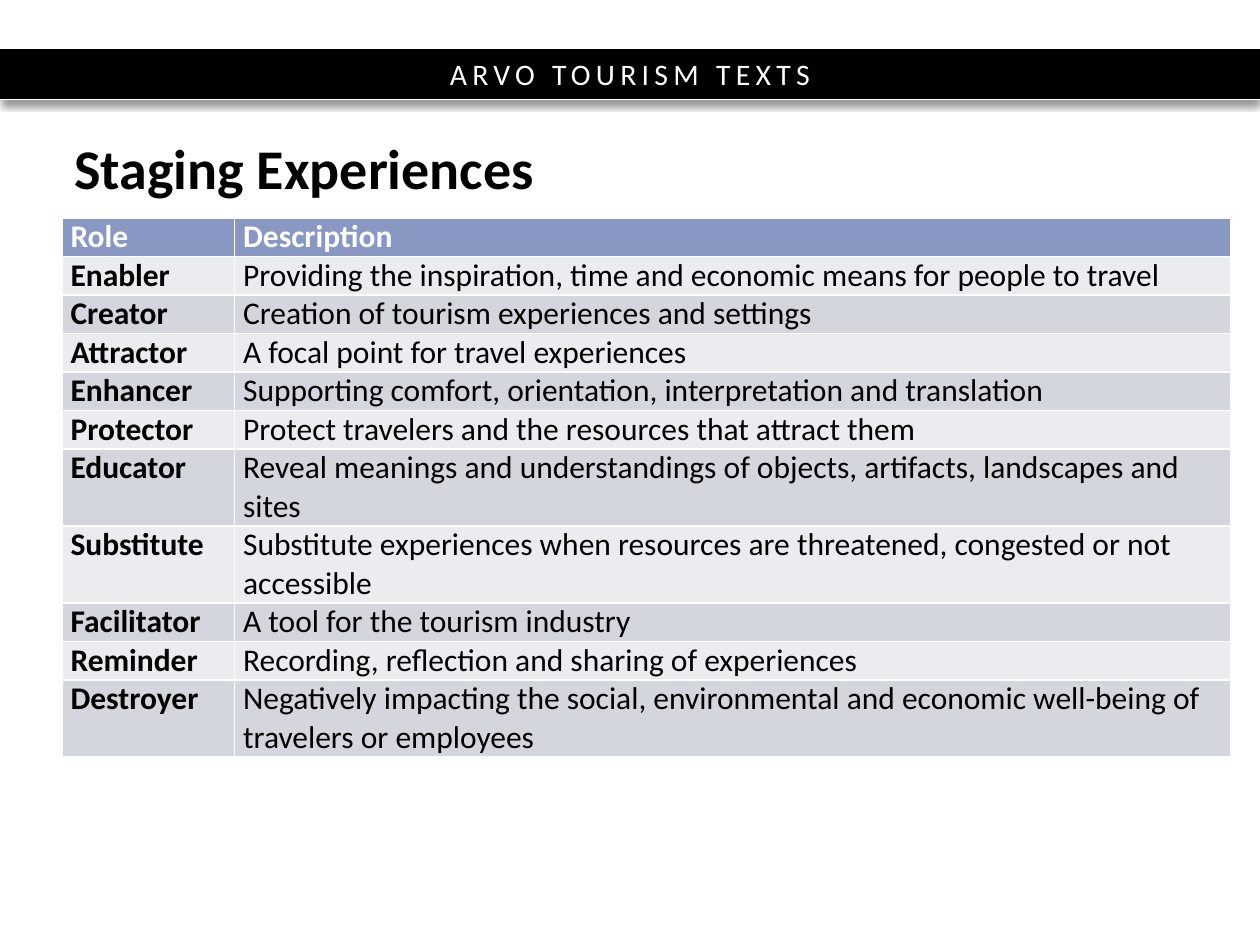
from dataclasses import dataclass

from lxml.etree import SubElement
from pptx import Presentation
from pptx.dml.color import RGBColor
from pptx.enum.shapes import MSO_CONNECTOR, MSO_SHAPE
from pptx.enum.text import MSO_ANCHOR, PP_ALIGN
from pptx.oxml import parse_xml
from pptx.oxml.ns import nsdecls, qn
from pptx.util import Inches, Pt


@dataclass(frozen=True)
class Theme:
    font: str = "Calibri"
    black: str = "000000"
    white: str = "FFFFFF"
    header: str = "8898C3"
    light_band: str = "EAECEF"
    dark_band: str = "D3D6DD"
    banner_size: float = 17
    title_size: float = 32
    table_size: float = 18


@dataclass(frozen=True)
class Role:
    name: str
    description: str
    lines: int = 1


THEME = Theme()
PAGE_WIDTH, PAGE_HEIGHT = 10, 7.5
BANNER_TOP, BANNER_HEIGHT = 0.38, 0.41
COLUMN_WIDTHS = (1.37, 7.91)
LINE_HEIGHT = 0.28

ROLES = [
    Role("Enabler", "Providing the inspiration, time and economic means for people to travel"),
    Role("Creator", "Creation of tourism experiences and settings"),
    Role("Attractor", "A focal point for travel experiences"),
    Role("Enhancer", "Supporting comfort, orientation, interpretation and translation"),
    Role("Protector", "Protect travelers and the resources that attract them"),
    Role("Educator", "Reveal meanings and understandings of objects, artifacts, "
         "landscapes and sites", lines=2),
    Role("Substitute", "Substitute experiences when resources are threatened, "
         "congested or not accessible", lines=2),
    Role("Facilitator", "A tool for the tourism industry"),
    Role("Reminder", "Recording, reflection and sharing of experiences"),
    Role("Destroyer", "Negatively impacting the social, environmental and economic "
         "well-being of travelers or employees", lines=2),
]


def write_text(frame, text: str, *, size: float, color: str = THEME.black,
               bold: bool = False, align=PP_ALIGN.LEFT, tracking: float = 0,
               line_spacing: float | None = None, space_after: float = 0) -> None:
    """Fill a text frame with one formatted paragraph; all measures are in points."""
    frame.word_wrap = True
    para = frame.paragraphs[0]
    para.alignment = align
    para.space_before = Pt(0)
    para.space_after = Pt(space_after)
    if line_spacing:
        para.line_spacing = Pt(line_spacing)
    span = para.add_run()
    span.text = text
    span.font.name = THEME.font
    span.font.size = Pt(size)
    span.font.bold = bold
    span.font.color.rgb = RGBColor.from_string(color)
    if tracking:
        span._r.get_or_add_rPr().set("spc", str(int(tracking * 100)))


def add_rule(page, top: float) -> None:
    rule = page.shapes.add_connector(MSO_CONNECTOR.STRAIGHT, 0, Inches(top),
                                     Inches(PAGE_WIDTH), Inches(top))
    rule.line.color.rgb = RGBColor.from_string(THEME.white)
    rule.line.width = Pt(0.75)
    SubElement(rule._element.spPr, qn("a:effectLst"))


def add_banner(page, text: str) -> None:
    banner = page.shapes.add_shape(MSO_SHAPE.RECTANGLE, 0, Inches(BANNER_TOP),
                                   Inches(PAGE_WIDTH), Inches(BANNER_HEIGHT))
    banner.fill.solid()
    banner.fill.fore_color.rgb = RGBColor.from_string(THEME.black)
    banner.line.fill.background()
    banner._element.spPr.append(parse_xml(
        f'<a:effectLst {nsdecls("a")}>'
        f'<a:outerShdw blurRad="{Pt(4)}" dist="{Pt(3)}" dir="5400000" rotWithShape="0">'
        f'<a:srgbClr val="{THEME.black}"><a:alpha val="40000"/></a:srgbClr>'
        '</a:outerShdw></a:effectLst>'))
    banner.text_frame.vertical_anchor = MSO_ANCHOR.MIDDLE
    write_text(banner.text_frame, text, size=THEME.banner_size, color=THEME.white,
               align=PP_ALIGN.CENTER, tracking=3)
    for top in (BANNER_TOP, BANNER_TOP + BANNER_HEIGHT):
        add_rule(page, top)


def set_title(page, text: str) -> None:
    title = page.shapes.title
    title.left, title.top = Inches(0.49), Inches(1.13)
    title.width, title.height = Inches(9.08), Inches(0.48)
    title.text_frame.vertical_anchor = MSO_ANCHOR.MIDDLE
    write_text(title.text_frame, text, size=THEME.title_size, bold=True, line_spacing=32)


def style_cell(cell, fill: str) -> None:
    """Set margins, white borders and fill; borders must precede the fill in the XML."""
    cell.margin_left = cell.margin_right = Inches(0.07)
    cell.margin_top = cell.margin_bottom = 0
    properties = cell._tc.get_or_add_tcPr()
    for side in ("lnL", "lnR", "lnT", "lnB"):
        border = SubElement(properties, qn(f"a:{side}"), w=str(Pt(1)))
        SubElement(SubElement(border, qn("a:solidFill")), qn("a:srgbClr"), val=THEME.white)
    cell.fill.solid()
    cell.fill.fore_color.rgb = RGBColor.from_string(fill)


def add_role_table(page, roles: list[Role]) -> None:
    rows = [Role("Role", "Description"), *roles]
    total_lines = sum(role.lines for role in rows)
    table = page.shapes.add_table(
        len(rows), len(COLUMN_WIDTHS), Inches(0.49), Inches(1.73),
        Inches(sum(COLUMN_WIDTHS)), Inches(total_lines * LINE_HEIGHT)).table
    for column, width in zip(table.columns, COLUMN_WIDTHS):
        column.width = Inches(width)
    for index, role in enumerate(rows):
        is_header = index == 0
        band = THEME.light_band if index % 2 else THEME.dark_band
        table.rows[index].height = Inches(role.lines * LINE_HEIGHT)
        for column, text in enumerate((role.name, role.description)):
            cell = table.cell(index, column)
            style_cell(cell, THEME.header if is_header else band)
            write_text(cell.text_frame, text, size=THEME.table_size,
                       color=THEME.white if is_header else THEME.black,
                       bold=is_header or column == 0,
                       space_after=2 if is_header else 2.9)


def main() -> None:
    deck = Presentation()
    deck.slide_width, deck.slide_height = Inches(PAGE_WIDTH), Inches(PAGE_HEIGHT)
    page = deck.slides.add_slide(deck.slide_layouts.get_by_name("Title Only"))
    add_banner(page, "ARVO TOURISM TEXTS")
    set_title(page, "Staging Experiences")
    add_role_table(page, ROLES)
    deck.save("out.pptx")


if __name__ == "__main__":
    main()
